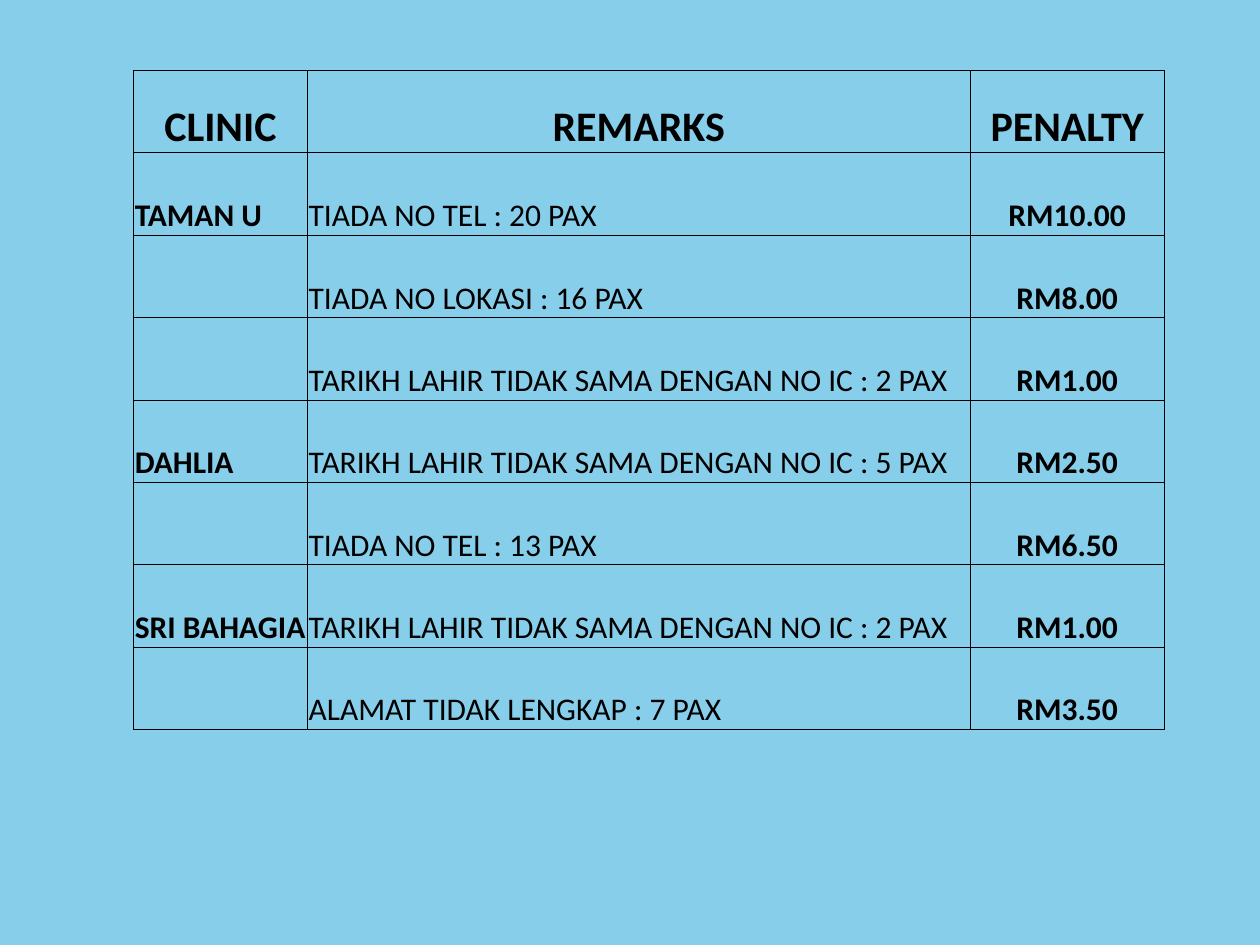
from typing import NamedTuple

from lxml import etree
from pptx import Presentation
from pptx.dml.color import RGBColor
from pptx.enum.text import MSO_ANCHOR, PP_ALIGN
from pptx.oxml.ns import qn
from pptx.util import Inches, Pt

BOTTOM = MSO_ANCHOR.BOTTOM
LEFT, CENTER = PP_ALIGN.LEFT, PP_ALIGN.CENTER
COLORS = {"background": "87CEEB", "text": "000000", "border": "000000"}
FONT = "Calibri"
COL_WIDTHS = (1.38, 5.26, 1.54)
TABLE_HEIGHT = 5.23
BORDER_WIDTH = Pt(0.5)


class Penalty(NamedTuple):
    clinic: str
    remarks: str
    amount: str


HEADER = Penalty("CLINIC", "REMARKS", "PENALTY")
PENALTIES = [
    Penalty("TAMAN U", "TIADA NO TEL : 20 PAX", "RM10.00"),
    Penalty("", "TIADA NO LOKASI : 16 PAX", "RM8.00"),
    Penalty("", "TARIKH LAHIR TIDAK SAMA DENGAN NO IC : 2 PAX", "RM1.00"),
    Penalty("DAHLIA", "TARIKH LAHIR TIDAK SAMA DENGAN NO IC : 5 PAX", "RM2.50"),
    Penalty("", "TIADA NO TEL : 13 PAX", "RM6.50"),
    Penalty("SRI BAHAGIA", "TARIKH LAHIR TIDAK SAMA DENGAN NO IC : 2 PAX", "RM1.00"),
    Penalty("", "ALAMAT TIDAK LENGKAP : 7 PAX", "RM3.50"),
]


def set_borders(cell) -> None:
    """Draw a thin solid line on all four sides of a cell."""
    tc_pr = cell._tc.get_or_add_tcPr()
    for i, side in enumerate(("lnL", "lnR", "lnT", "lnB")):
        ln = etree.Element(qn(f"a:{side}"), w=str(int(BORDER_WIDTH)))
        fill = etree.SubElement(ln, qn("a:solidFill"))
        etree.SubElement(fill, qn("a:srgbClr"), val=COLORS["border"])
        tc_pr.insert(i, ln)


def write_text(tf, text: str, *, size: int = 18, bold: bool = False, align=LEFT) -> None:
    """Write one formatted paragraph into a text frame."""
    p = tf.paragraphs[0]
    p.alignment = align
    if not text:
        return
    r = p.add_run()
    r.text = text
    r.font.name = FONT
    r.font.size = Pt(size)
    r.font.bold = bold
    r.font.color.rgb = RGBColor.from_string(COLORS["text"])


def format_cell(cell) -> None:
    """Give a cell its margins, bottom anchor, clear fill and borders."""
    cell.vertical_anchor = BOTTOM
    cell.margin_left = cell.margin_right = cell.margin_top = Inches(0.01)
    cell.margin_bottom = 0
    cell.fill.background()
    set_borders(cell)


def add_penalty_table(slide, rows: list[Penalty]) -> None:
    """Add the table of clinics, remarks and penalties."""
    table = slide.shapes.add_table(
        len(rows), len(COL_WIDTHS), Inches(1.06), Inches(0.56),
        Inches(sum(COL_WIDTHS)), Inches(TABLE_HEIGHT),
    ).table
    table.first_row = table.horz_banding = False
    for column, width in zip(table.columns, COL_WIDTHS):
        column.width = Inches(width)
    for i, row in enumerate(rows):
        is_header = i == 0
        table.rows[i].height = Inches(TABLE_HEIGHT / len(rows))
        for j, text in enumerate(row):
            cell = table.cell(i, j)
            format_cell(cell)
            write_text(
                cell.text_frame, text,
                size=24 if is_header else 18,
                bold=is_header or j != 1,
                align=CENTER if is_header or j == 2 else LEFT,
            )


def main() -> None:
    """Build the slide and save it."""
    prs = Presentation()
    prs.slide_width, prs.slide_height = Inches(10), Inches(7.5)
    s = prs.slides.add_slide(prs.slide_layouts[6])
    s.background.fill.solid()
    s.background.fill.fore_color.rgb = RGBColor.from_string(COLORS["background"])
    add_penalty_table(s, [HEADER, *PENALTIES])
    prs.save("out.pptx")


if __name__ == "__main__":
    main()
